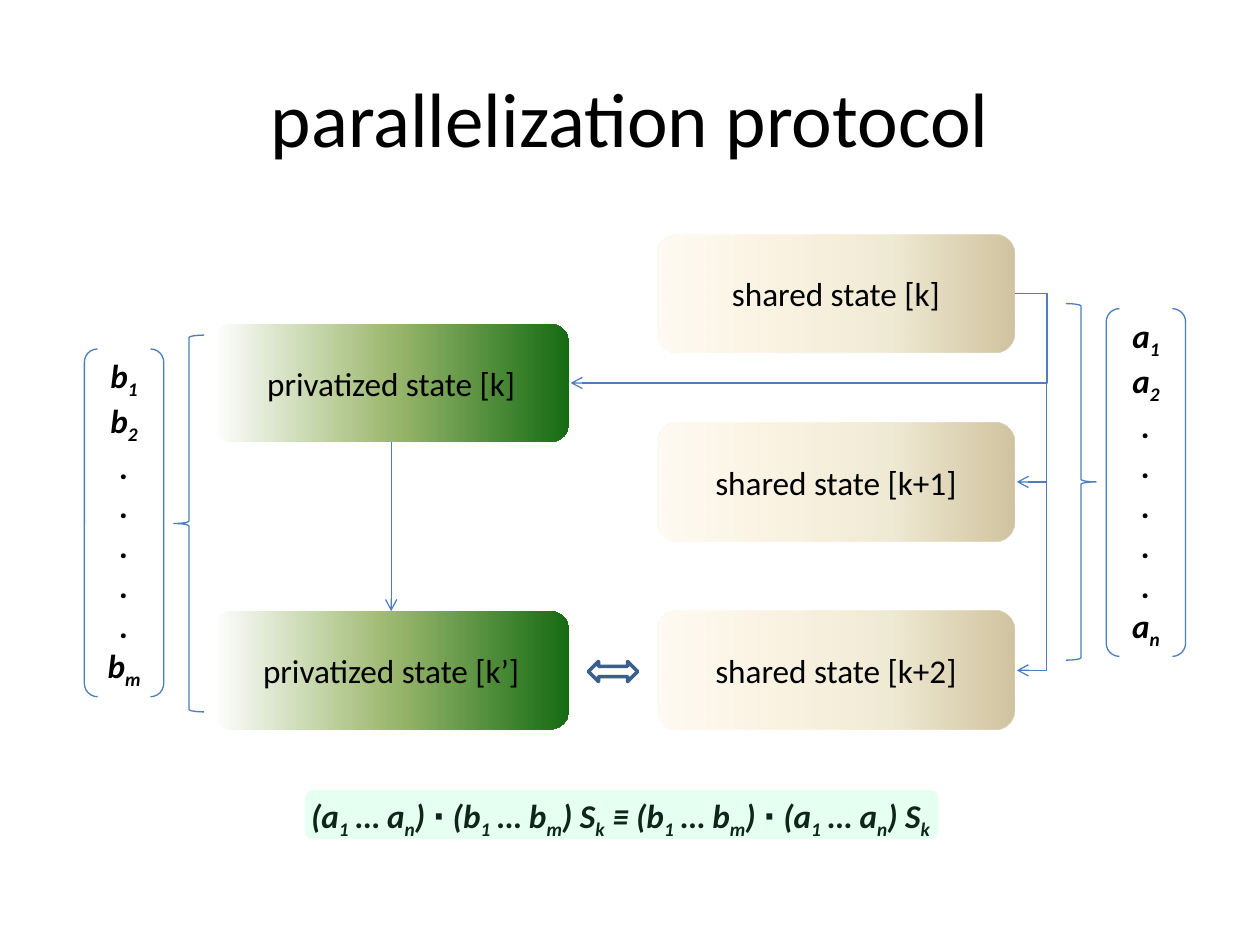
from lxml.etree import SubElement
from pptx import Presentation
from pptx.dml.color import RGBColor
from pptx.enum.shapes import MSO_CONNECTOR as LINK, MSO_SHAPE as SHAPE
from pptx.enum.text import MSO_ANCHOR as ANCHOR, PP_ALIGN as ALIGN
from pptx.oxml.ns import qn
from pptx.util import Inches, Pt

TITLE = "parallelization protocol"
# An underscore puts the next character in subscript.
FORMULA = "(a_1 … a_n) ∙ (b_1 … b_m) S_k ≡ (b_1 … b_m) ∙ (a_1 … a_n) S_k"
DOTS = ["."] * 5
SHARED_OPS = ["a_1", "a_2", *DOTS, "a_n"]
PRIVATE_OPS = ["b_1", "b_2", *DOTS, "b_m"]

COLORS = {"text": "000000", "line": "4B7EBC", "arrow": "3A5F8C", "panel": "57FFA3"}
FONT, BODY_SIZE, TITLE_SIZE = "Calibri", 19, 44

# Gradient stops: position in percent, colour, opacity in percent
SAND = [(0, "FFEFD1", 25), (65, "F0EBD5", 100), (100, "D1C39F", 100)]
GREEN = [(0, "FFFFFF", 100), (50, "9CB86E", 100), (100, "156B13", 100)]

BOX_W, BOX_H = 2.83, 0.94
PRIVATE_X, SHARED_X = 1.69, 5.22
TOP, ROW_STEP = 1.86, 1.495
ROWS = [TOP + i * ROW_STEP for i in range(3)]
PRIVATE_Y = 2.57
TURN = 0.25  # how far the bent arrows run out to the right

SHARED = [("shared state [k]", ROWS[0]), ("shared state [k+1]", ROWS[1]),
          ("shared state [k+2]", ROWS[2])]
PRIVATE = [("privatized state [k]", PRIVATE_Y), ("privatized state [k’]", ROWS[2])]
BRACES = [(SHAPE.RIGHT_BRACE, 8.46, 2.41, 0.24, 2.83),
          (SHAPE.LEFT_BRACE, 1.38, 2.66, 0.24, 2.99)]
BRACKETS = [(SHARED_OPS, 8.78, 2.45), (PRIVATE_OPS, 0.67, 2.77)]

deck = Presentation()
deck.slide_width, deck.slide_height = Inches(10), Inches(7.5)
page = deck.slides.add_slide(deck.slide_layouts[5])


def color(name):
    return RGBColor.from_string(COLORS[name])


def style(span, size=BODY_SIZE, strong=False):
    span.font.name, span.font.size = FONT, Pt(size)
    span.font.color.rgb = color("text")
    if strong:
        span.font.bold = span.font.italic = True


def write_math(para, text):
    """Fill a paragraph with bold italic text, lowering what follows each underscore."""
    first, *rest = text.split("_")
    pieces = [(first, False)]
    for part in rest:
        pieces += [(part[0], True), (part[1:], False)]
    for piece, lowered in pieces:
        if piece:
            span = para.add_run()
            span.text = piece
            style(span, strong=True)
            if lowered:
                span.font._element.set("baseline", "-25000")


def add_shape(kind, x, y, w, h, line=None, weight=0.75):
    """Add an unfilled shape, outlined only when a line colour is named."""
    shape = page.shapes.add_shape(kind, *map(Inches, (x, y, w, h)))
    shape.shadow.inherit = False
    shape.fill.background()
    if line:
        shape.line.color.rgb = color(line)
        shape.line.width = Pt(weight)
    else:
        shape.line.fill.background()
    return shape


def set_alpha(color_node, percent):
    SubElement(color_node, qn("a:alpha")).set("val", str(percent * 1000))


def fill_gradient(shape, stops):
    shape.fill.gradient()
    shape.fill.gradient_angle = 0
    stop_list = shape._element.spPr.find(".//" + qn("a:gsLst"))
    for old in list(stop_list):
        stop_list.remove(old)
    for position, shade, opacity in stops:
        stop = SubElement(stop_list, qn("a:gs"))
        stop.set("pos", str(position * 1000))
        node = SubElement(stop, qn("a:srgbClr"))
        node.set("val", shade)
        if opacity < 100:
            set_alpha(node, opacity)


def add_state(label, x, y, stops):
    box = add_shape(SHAPE.ROUNDED_RECTANGLE, x, y, BOX_W, BOX_H)
    fill_gradient(box, stops)
    frame = box.text_frame
    frame.text = label
    frame.vertical_anchor = ANCHOR.MIDDLE
    frame.paragraphs[0].alignment = ALIGN.CENTER
    style(frame.paragraphs[0].runs[0])
    return box


def add_arrow(kind, start, end):
    arrow = page.shapes.add_connector(kind, *map(Inches, (*start, *end)))
    arrow.line.color.rgb = color("line")
    arrow.line.width = Pt(0.75)
    SubElement(arrow.line._get_or_add_ln(), qn("a:tailEnd")).set("type", "arrow")
    SubElement(arrow._element.spPr, qn("a:effectLst"))
    return arrow


def add_bent_arrow(start, end):
    """Run right from start by TURN, then down, then back to end."""
    arrow = add_arrow(LINK.ELBOW, start, end)
    geometry = arrow._element.spPr.find(qn("a:prstGeom"))
    guides = geometry.find(qn("a:avLst"))
    if guides is None:
        guides = SubElement(geometry, qn("a:avLst"))
    guide = SubElement(guides, qn("a:gd"))
    guide.set("name", "adj1")
    guide.set("fmla", f"val {round(TURN / (end[0] - start[0]) * 100000)}")


title = page.shapes.title
title.left, title.top, title.width, title.height = map(Inches, (0.5, 0.3, 9, 1.25))
title.text_frame.text = TITLE
title.text_frame.vertical_anchor = ANCHOR.MIDDLE
title.text_frame.paragraphs[0].alignment = ALIGN.CENTER
style(title.text_frame.paragraphs[0].runs[0], TITLE_SIZE)

for label, y in SHARED:
    add_state(label, SHARED_X, y, SAND)
before, after = [add_state(label, PRIVATE_X, y, GREEN) for label, y in PRIVATE]

source = (SHARED_X + BOX_W + 0.01, ROWS[0] + BOX_H / 2)
targets = [(source[0] + 0.01, y + BOX_H / 2) for y in ROWS[1:]]
targets.append((PRIVATE_X + BOX_W + 0.01, PRIVATE_Y + BOX_H / 2))
for target in targets:
    add_bent_arrow(source, target)

center = PRIVATE_X + BOX_W / 2
step = add_arrow(LINK.STRAIGHT, (center, PRIVATE_Y + BOX_H), (center, ROWS[2]))
step.begin_connect(before, 2)
step.end_connect(after, 0)

add_shape(SHAPE.LEFT_RIGHT_ARROW, 4.67, 5.25, 0.39, 0.16, "arrow", 2)
for brace in BRACES:
    add_shape(*brace, "line")

for operations, x, y in BRACKETS:
    bracket = add_shape(SHAPE.DOUBLE_BRACKET, x, y, 0.63, 2.76, "line")
    frame = bracket.text_frame
    frame.vertical_anchor = ANCHOR.MIDDLE
    for i, operation in enumerate(operations):
        para = frame.add_paragraph() if i else frame.paragraphs[0]
        para.alignment = ALIGN.CENTER
        write_math(para, operation)

formula = page.shapes.add_textbox(*map(Inches, (2.37, 6.26, 5.22, 0.42)))
formula.text_frame.word_wrap = False
write_math(formula.text_frame.paragraphs[0], FORMULA)

panel = add_shape(SHAPE.ROUNDED_RECTANGLE, 2.42, 6.27, 5.03, 0.39)
panel.fill.solid()
panel.fill.fore_color.rgb = color("panel")
set_alpha(panel._element.spPr.find(".//" + qn("a:srgbClr")), 15)

deck.save("out.pptx")
